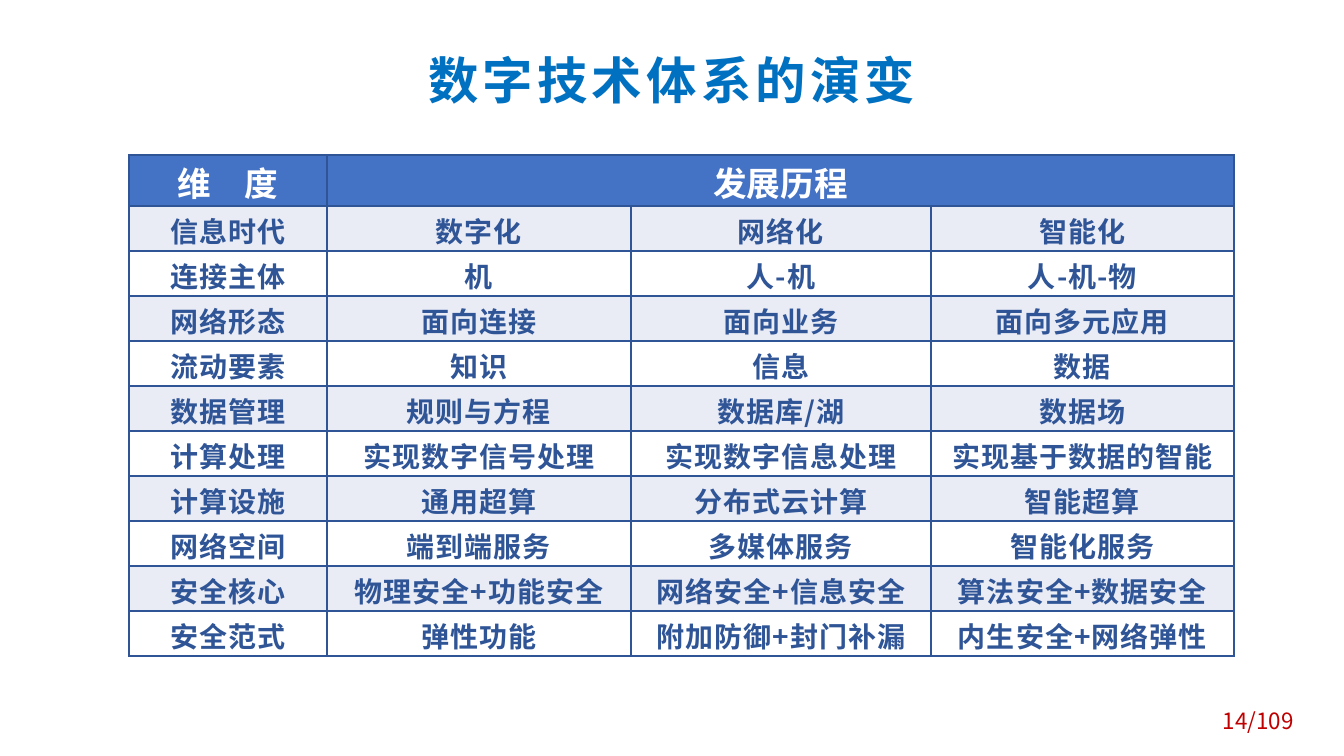
import lxml.etree
import pptx
import pptx.dml.color
import pptx.enum.text
import pptx.oxml.ns
import pptx.util

PX = 914400 / 100.8
FONT = "Noto Sans CJK SC"
BLUE, NAVY, PALE, WHITE = "4472C4", "2F5597", "E9EBF5", "FFFFFF"

TITLE = "数字技术体系的演变"
PAGE_NUMBER = "14/109"
HEADER = ["维　度", "发展历程", "", ""]
ROWS = [
    ["信息时代", "数字化", "网络化", "智能化"],
    ["连接主体", "机", "人-机", "人-机-物"],
    ["网络形态", "面向连接", "面向业务", "面向多元应用"],
    ["流动要素", "知识", "信息", "数据"],
    ["数据管理", "规则与方程", "数据库/湖", "数据场"],
    ["计算处理", "实现数字信号处理", "实现数字信息处理", "实现基于数据的智能"],
    ["计算设施", "通用超算", "分布式云计算", "智能超算"],
    ["网络空间", "端到端服务", "多媒体服务", "智能化服务"],
    ["安全核心", "物理安全+功能安全", "网络安全+信息安全", "算法安全+数据安全"],
    ["安全范式", "弹性功能", "附加防御+封门补漏", "内生安全+网络弹性"],
]
COLUMN_WIDTHS = [198, 304, 300, 303]
HEADER_HEIGHT, ROW_HEIGHT = 51, 45


def px(length):
    return pptx.util.Emu(round(length * PX))


def color(value):
    return pptx.dml.color.RGBColor.from_string(value)


def add_child(parent, tag, **attributes):
    return lxml.etree.SubElement(parent, pptx.oxml.ns.qn(tag), attributes)


def write(frame, text, size, ink, bold=False, spacing=0, centered=True):
    """Put one formatted line in a text frame; spacing is in points."""
    para = frame.paragraphs[0]
    if centered:
        para.alignment = pptx.enum.text.PP_ALIGN.CENTER
    span = para.add_run()
    span.text = text
    span.font.name = FONT
    span.font.size = pptx.util.Pt(size)
    span.font.bold = bold
    span.font.color.rgb = color(ink)
    properties = span.font._element
    add_child(properties, "a:ea", typeface=FONT)
    if spacing:
        properties.set("spc", str(round(spacing * 100)))


def add_label(page, place, text, **style):
    box = page.shapes.add_textbox(*map(px, place))
    box.text_frame.word_wrap = False
    write(box.text_frame, text, **style)


def style_cell(cell, fill, margin_top):
    properties = cell._tc.get_or_add_tcPr()
    for side in "LRTB":
        line = add_child(properties, f"a:ln{side}", w=str(pptx.util.Pt(1.5)))
        add_child(add_child(line, "a:solidFill"), "a:srgbClr", val=NAVY)
    cell.fill.solid()
    cell.fill.fore_color.rgb = color(fill)
    cell.margin_left = cell.margin_right = px(4)
    cell.margin_top, cell.margin_bottom = px(margin_top), 0


def add_evolution_table(page):
    height = HEADER_HEIGHT + ROW_HEIGHT * len(ROWS)
    frame = page.shapes.add_table(
        len(ROWS) + 1, len(COLUMN_WIDTHS),
        px(129), px(155), px(sum(COLUMN_WIDTHS)), px(height))
    table = frame.table
    for column, width in zip(table.columns, COLUMN_WIDTHS):
        column.width = px(width)
    for number, texts in enumerate([HEADER] + ROWS):
        is_header = number == 0
        table.rows[number].height = px(HEADER_HEIGHT if is_header else ROW_HEIGHT)
        fill = BLUE if is_header else PALE if number % 2 else WHITE
        for index, text in enumerate(texts):
            cell = table.cell(number, index)
            style_cell(cell, fill, margin_top=2 if is_header else 4)
            if is_header:
                cell.vertical_anchor = pptx.enum.text.MSO_ANCHOR.MIDDLE
            if text:
                write(cell.text_frame, text, bold=True,
                      size=24 if is_header else 20,
                      ink=WHITE if is_header else NAVY,
                      spacing=0 if is_header else 0.7)
    table.cell(0, 1).merge(table.cell(0, 3))


def main():
    deck = pptx.Presentation()
    deck.slide_width, deck.slide_height = px(1344), px(756)
    page = deck.slides.add_slide(deck.slide_layouts[6])
    add_label(page, (1213, 702, 92, 36), PAGE_NUMBER,
              size=16, ink="C00000", centered=False)
    add_evolution_table(page)
    add_label(page, (416, 44, 512, 69), TITLE,
              size=36, ink="0070C0", bold=True, spacing=3)
    deck.save("out.pptx")


if __name__ == "__main__":
    main()
